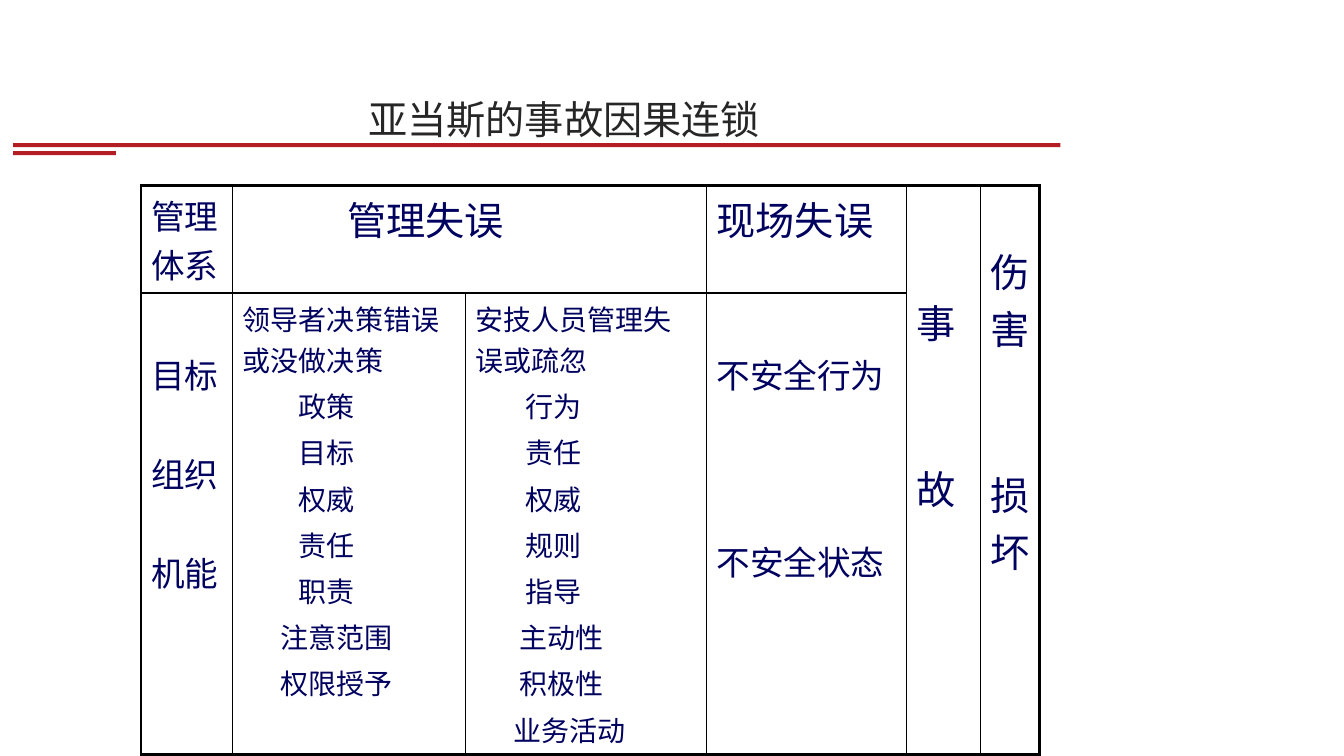
from lxml import etree
from pptx import Presentation
from pptx.dml.color import RGBColor
from pptx.enum.shapes import MSO_SHAPE
from pptx.enum.text import MSO_ANCHOR, MSO_AUTO_SIZE, PP_ALIGN
from pptx.oxml.ns import qn
from pptx.util import Pt

RECTANGLE = MSO_SHAPE.RECTANGLE
MIDDLE, CENTER = MSO_ANCHOR.MIDDLE, PP_ALIGN.CENTER
NO_AUTOFIT = MSO_AUTO_SIZE.NONE
TITLE_ONLY = 5

COLORS = {"title": "262626", "bar": "B41D24", "ink": "01015F", "border": "000000"}
LATIN, CJK = "Times New Roman", "Noto Sans CJK SC"
OUTER, INNER = 2.25, 1
RELATIVE = "20%"

COLUMN_WIDTHS = [65.5, 166.3, 172.1, 142.6, 53.3, 41.8]
ROW_HEIGHTS = [74.2, 299.5]
MERGES = [((0, 1), (0, 2)), ((0, 4), (1, 4)), ((0, 5), (1, 5))]


def listing(heading, items):
    """Heading followed by (text, indent) items with proportional spacing."""
    return [(heading, 0, 0)] + [(text, indent, RELATIVE) for text, indent in items]


LEADER_ITEMS = [(text, 40) for text in ("政策", "目标", "权威", "责任", "职责")]
LEADER_ITEMS += [(text, 26.7) for text in ("注意范围", "权限授予")]
SAFETY_ITEMS = [(text, 35.6) for text in ("行为", "责任", "权威", "规则", "指导")]
SAFETY_ITEMS += [("主动性", 31.1), ("积极性", 31.1), ("业务活动", 26.7)]

# (row, column): (font size, top margin, [(text, indent, space before)])
CELLS = {
    (0, 0): (24, 3.6, [("管理体系", 0, 0)]),
    (0, 1): (28, 3.6, [("管理失误", 74.7, 0)]),
    (0, 3): (28, 3.6, [("现场失误", 0, 0)]),
    (0, 4): (28, 76.7, [("事", 0, 0), ("故", 0, 78.6)]),
    (0, 5): (28, 40.4, [("伤害", 0, 0), ("损坏", 0, 78.6)]),
    (1, 0): (24, 40.4, [("目标", 0, 0), ("组织", 0, 36), ("机能", 0, 36)]),
    (1, 1): (20, 3.6, listing("领导者决策错误或没做决策", LEADER_ITEMS)),
    (1, 2): (20, 3.6, listing("安技人员管理失误或疏忽", SAFETY_ITEMS)),
    (1, 3): (24, 40.4, [("不安全行为", 0, 0), ("不安全状态", 0, 98.9)]),
}


class SlideBuilder:
    def __init__(self, slide):
        self.slide = slide

    def apply(self, target, formats):
        for name, value in formats.items():
            setattr(target, name, value)

    def run(self, paragraph, text, size, color, latin):
        run = paragraph.add_run()
        run.text = text
        self.apply(run.font, {"size": Pt(size), "name": latin, "bold": False})
        run.font.color.rgb = RGBColor.from_string(COLORS[color])
        east_asian = etree.Element(qn("a:ea"), typeface=CJK)
        run._r.rPr.find(qn("a:latin")).addnext(east_asian)

    def title(self, text, left, top, width, height):
        title = self.slide.shapes.title
        self.apply(title, {"left": Pt(left), "top": Pt(top),
                           "width": Pt(width), "height": Pt(height)})
        self.apply(title.text_frame, {"word_wrap": True, "auto_size": NO_AUTOFIT,
                                      "vertical_anchor": MIDDLE})
        paragraph = title.text_frame.paragraphs[0]
        paragraph.alignment = CENTER
        self.run(paragraph, text, 28, "title", CJK)

    def bar(self, left, top, width, height):
        bar = self.slide.shapes.add_shape(
            RECTANGLE, Pt(left), Pt(top), Pt(width), Pt(height))
        bar.shadow.inherit = False
        bar.fill.solid()
        bar.fill.fore_color.rgb = RGBColor.from_string(COLORS["bar"])
        bar.line.fill.background()

    def fill_cell(self, cell, size, top_margin, entries):
        self.apply(cell, {"margin_top": Pt(top_margin), "margin_bottom": Pt(3.6),
                          "margin_left": Pt(7.2), "margin_right": Pt(7.2)})
        frame = cell.text_frame
        for index, (text, indent, before) in enumerate(entries):
            paragraph = frame.add_paragraph() if index else frame.paragraphs[0]
            properties = paragraph._p.get_or_add_pPr()
            if indent:
                properties.set("marL", str(Pt(indent)))
            if before == RELATIVE:
                spacing = etree.SubElement(properties, qn("a:spcBef"))
                etree.SubElement(spacing, qn("a:spcPct"), val="20000")
            elif before:
                paragraph.space_before = Pt(before)
            self.run(paragraph, text, size, "ink", LATIN)

    def borders(self, cell, widths):
        cell.fill.background()
        properties = cell._tc.get_or_add_tcPr()
        for index, (side, width) in enumerate(widths.items()):
            line = etree.Element(qn(f"a:ln{side}"), w=str(Pt(width)))
            fill = etree.SubElement(line, qn("a:solidFill"))
            etree.SubElement(fill, qn("a:srgbClr"), val=COLORS["border"])
            properties.insert(index, line)

    def table(self, left, top):
        rows, columns = len(ROW_HEIGHTS), len(COLUMN_WIDTHS)
        table = self.slide.shapes.add_table(
            rows, columns, Pt(left), Pt(top),
            Pt(sum(COLUMN_WIDTHS)), Pt(sum(ROW_HEIGHTS))).table
        self.apply(table, {"first_row": False, "horz_banding": False})
        for column, width in zip(table.columns, COLUMN_WIDTHS):
            column.width = Pt(width)
        for row, height in zip(table.rows, ROW_HEIGHTS):
            row.height = Pt(height)
        for first, last in MERGES:
            table.cell(*first).merge(table.cell(*last))
        for r in range(rows):
            for c in range(columns):
                cell = table.cell(r, c)
                bottom = r + (cell.span_height if cell.is_merge_origin else 1)
                right = c + (cell.span_width if cell.is_merge_origin else 1)
                on_edge = {"L": c == 0, "R": right == columns,
                           "T": r == 0, "B": bottom == rows}
                if cell.is_spanned:
                    del on_edge["T" if r else "L"]
                self.borders(cell, {side: OUTER if edge else INNER
                                    for side, edge in on_edge.items()})
        for position, content in CELLS.items():
            self.fill_cell(table.cell(*position), *content)


def main():
    deck = Presentation()
    deck.slide_width, deck.slide_height = Pt(960), Pt(540)
    builder = SlideBuilder(deck.slides.add_slide(deck.slide_layouts[TITLE_ONLY]))
    builder.title("亚当斯的事故因果连锁", 13, 64.1, 779.8, 41)
    for top, width in ((102.2, 748.1), (108, 73.4)):
        builder.bar(9.4, top, width, 2.9)
    builder.table(100.8, 132.5)
    deck.save("out.pptx")


if __name__ == "__main__":
    main()
